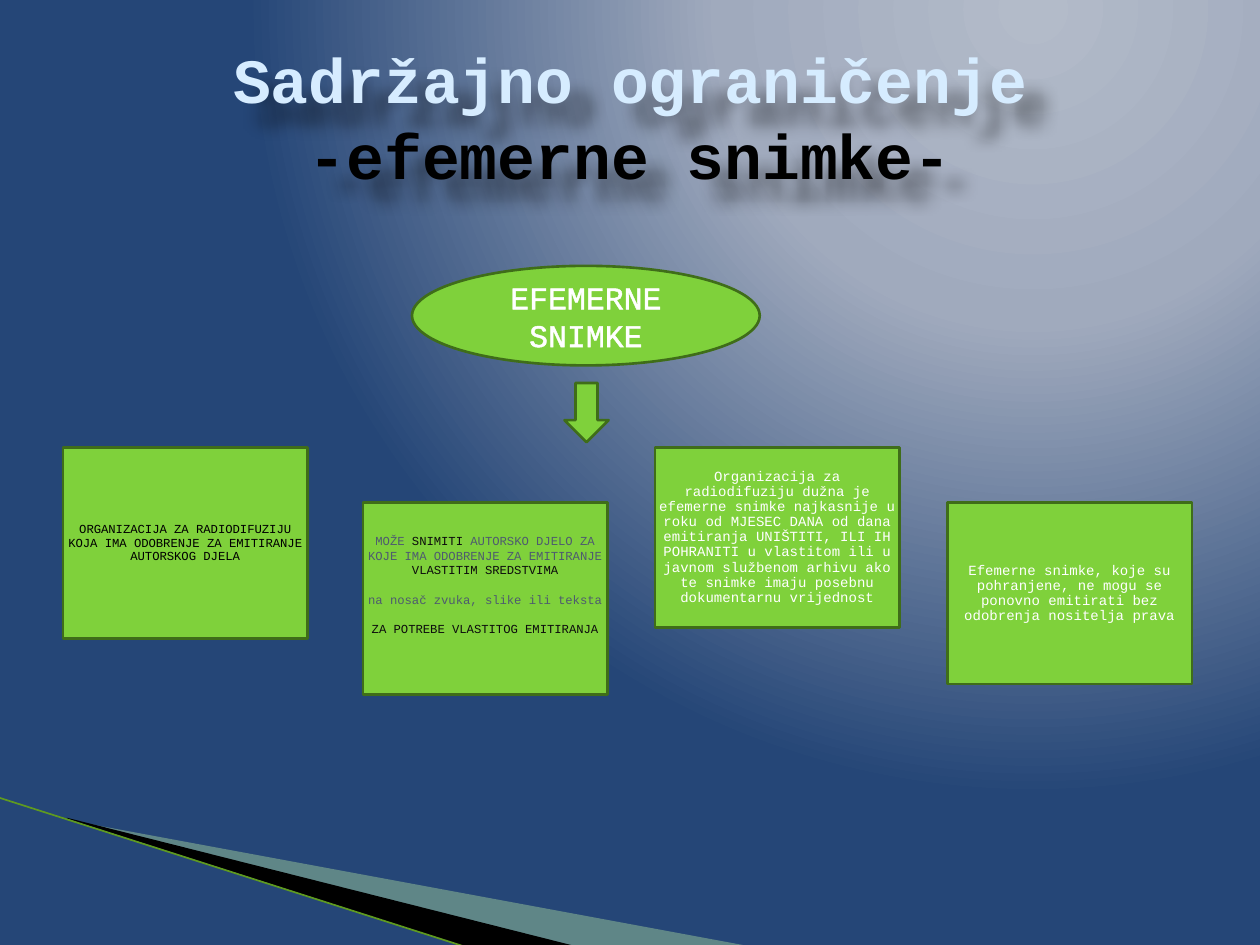
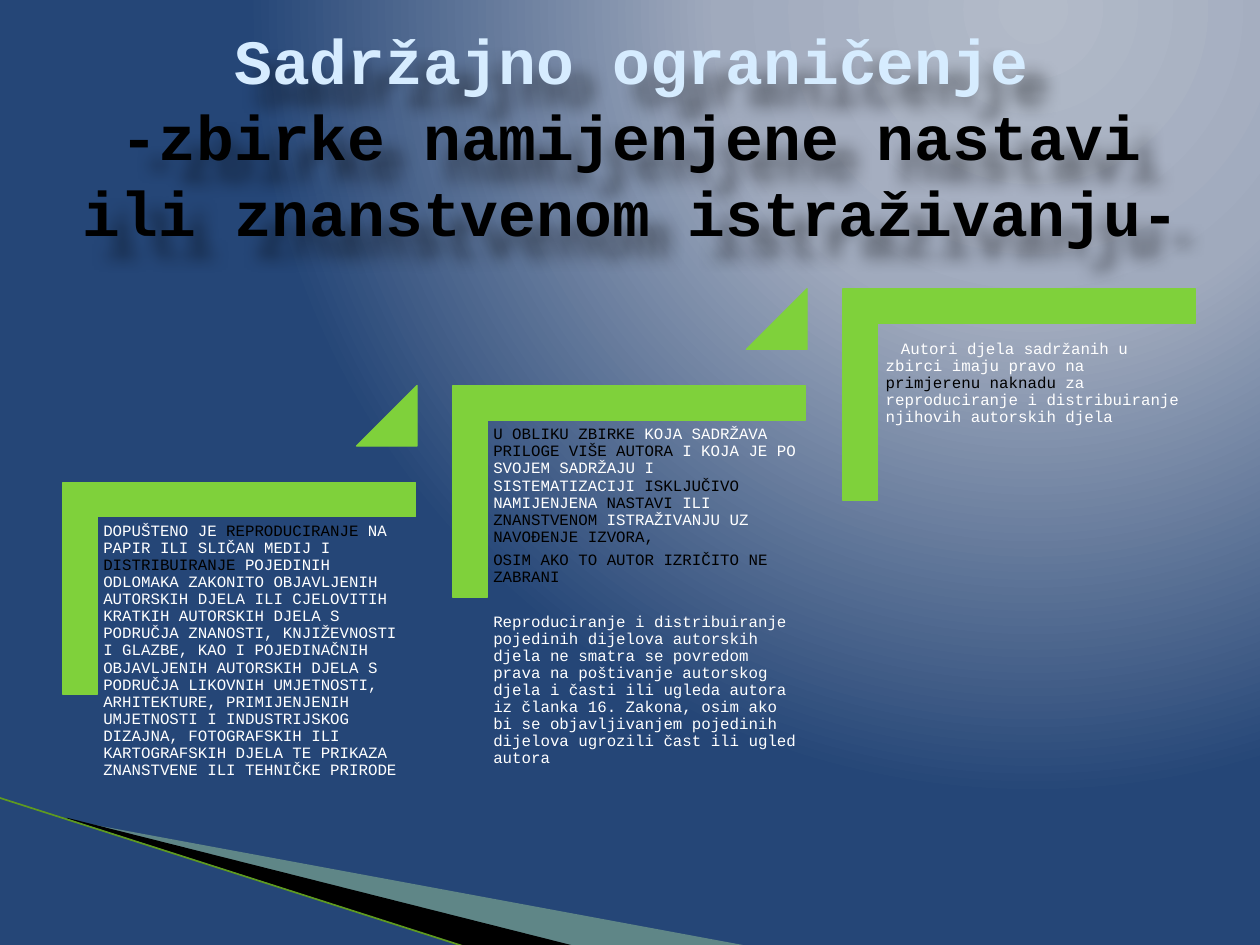
from pptx import Presentation
from pptx.dml.color import RGBColor
from pptx.enum.shapes import MSO_CONNECTOR, MSO_SHAPE
from pptx.enum.text import MSO_ANCHOR, PP_ALIGN
from pptx.oxml import parse_xml
from pptx.oxml.ns import nsdecls, qn
from pptx.util import Inches, Pt

FONT = "Courier New"
GREEN, DARK_GREEN = "7FD13B", "3F6D19"
WHITE, BLACK, INK, SLATE, ICE = "FFFFFF", "000000", "0D0D0D", "4E5B6F", "D6ECFF"
BACKGROUND_STOPS = [(0, "B3BBC9"), (40, "A0AABD"), (100, "254677")]
WEDGES = [
    ([(0.55, 6.51), (5.95, 7.51), (4.56, 7.51), (0.55, 6.5)], "B8E7A1", 40),
    ([(0.53, 6.49), (4.57, 7.51), (3.72, 7.52), (0.54, 6.5)], BLACK, 100),
]
EDGE_LINE = (-0.01, 6.33, 3.71, 7.52)
HEADING = "Sadržajno ograničenje"

RECORDING_TITLE = ("-efemerne snimke-", (0.5, 0.3, 9, 1.25))
RECORDING_LABEL = "EFEMERNE SNIMKE"
RECORDING_BOXES = [
    {"at": (0.5, 3.55, 1.94, 1.52), "size": 7, "paragraphs": [
        [("ORGANIZACIJA ZA RADIODIFUZIJU KOJA IMA ODOBRENJE ZA EMITIRANJE "
          "AUTORSKOG DJELA", BLACK)]]},
    {"at": (2.88, 3.99, 1.94, 1.52), "size": 7, "spacing": 1, "gaps": (0, 8.4, 8.4),
     "insets": (0, 0, 0, 0.22), "paragraphs": [
        [("MOŽE ", SLATE), ("SNIMITI", INK),
         (" AUTORSKO DJELO ZA KOJE IMA ODOBRENJE ZA EMITIRANJE ", SLATE),
         ("VLASTITIM SREDSTVIMA", INK)],
        [("na nosač zvuka, slike ili teksta", SLATE)],
        [("ZA POTREBE VLASTITOG EMITIRANJA", INK)]]},
    {"at": (5.2, 3.55, 1.94, 1.43), "size": 8, "paragraphs": [
        [("Organizacija za radiodifuziju dužna je efemerne snimke najkasnije u roku "
          "od MJESEC DANA od dana emitiranja UNIŠTITI, ILI IH POHRANITI u vlastitom "
          "ili u javnom službenom arhivu ako te snimke imaju posebnu dokumentarnu "
          "vrijednost", WHITE)]]},
    {"at": (7.52, 3.99, 1.94, 1.44), "size": 8, "paragraphs": [
        [("Efemerne snimke, koje su pohranjene, ne mogu se ponovno emitirati bez "
          "odobrenja nositelja prava", WHITE)]]},
]

COLLECTION_TITLE = ("-zbirke namijenjene nastavi ili znanstvenom istraživanju-",
                    (0.51, 0.21, 9, 1.73))
STEP_RIGHT, STEP_UP = 3.095, 0.768
COLLECTION_STEPS = [
    {"paragraphs": [
        [("DOPUŠTENO JE ", WHITE), ("REPRODUCIRANJE", BLACK),
         (" NA PAPIR ILI SLIČAN MEDIJ I ", WHITE), ("DISTRIBUIRANJE ", BLACK),
         ("POJEDINIH ODLOMAKA ZAKONITO OBJAVLJENIH AUTORSKIH DJELA ILI CJELOVITIH "
          "KRATKIH AUTORSKIH DJELA S PODRUČJA ZNANOSTI, KNJIŽEVNOSTI I GLAZBE, KAO I "
          "POJEDINAČNIH OBJAVLJENIH AUTORSKIH DJELA S PODRUČJA LIKOVNIH UMJETNOSTI, "
          "ARHITEKTURE, PRIMIJENJENIH UMJETNOSTI I INDUSTRIJSKOG DIZAJNA, "
          "FOTOGRAFSKIH ILI KARTOGRAFSKIH DJELA TE PRIKAZA ZNANSTVENE ILI TEHNIČKE "
          "PRIRODE", WHITE)]]},
    {"gaps": (0, 3.3, 16), "paragraphs": [
        [("U OBLIKU ZBIRKE ", BLACK), ("KOJA SADRŽAVA ", WHITE),
         ("PRILOGE VIŠE AUTORA ", BLACK),
         ("I KOJA JE PO SVOJEM SADRŽAJU I SISTEMATIZACIJI ", WHITE),
         ("ISKLJUČIVO", BLACK), (" NAMIJENJENA ", WHITE), ("NASTAVI ", BLACK),
         ("ILI ", WHITE), ("ZNANSTVENOM", BLACK), (" ISTRAŽIVANJU UZ ", WHITE),
         ("NAVOĐENJE IZVORA,", BLACK)],
        [("OSIM AKO TO AUTOR IZRIČITO NE ZABRANI", BLACK)],
        [("Reproduciranje i distribuiranje pojedinih dijelova autorskih djela ne "
          "smatra se povredom prava na poštivanje autorskog djela i časti ili ugleda "
          "autora iz članka 16. Zakona, osim ako bi se objavljivanjem pojedinih "
          "dijelova ugrozili čast ili ugled autora", WHITE)]]},
    {"insets": (0.06, 0.13, 0.09, 0.06), "indent": 0.12, "paragraphs": [
        [("Autori djela sadržanih u zbirci imaju pravo na ", WHITE),
         ("primjerenu naknadu", BLACK),
         (" za reproduciranje i distribuiranje njihovih autorskih djela", WHITE)]]},
]


def colour(value):
    return RGBColor.from_string(value)


def apply(target, values):
    for name, value in values.items():
        setattr(target, name, value)


def xml(text):
    head, tail = text.split(">", 1) if "/>" not in text.split(">")[0] + ">" else (text[:-2], None)
    return parse_xml(f"{head} {nsdecls('a')}" + ("/>" if tail is None else ">" + tail))


def paint_background(master):
    master.background.fill.gradient()
    gradient = next(master.element.iter(qn("a:gradFill")))
    for child in list(gradient):
        gradient.remove(child)
    stops = "".join(f'<a:gs pos="{place * 1000}"><a:srgbClr val="{value}"/></a:gs>'
                    for place, value in BACKGROUND_STOPS)
    gradient.append(xml(f"<a:gsLst>{stops}</a:gsLst>"))
    gradient.append(xml('<a:path path="circle"><a:fillToRect l="65000" t="0" r="0" '
                        'b="98000"/></a:path>'))


def dress(shape, fill, line=None, width=0):
    shape.shadow.inherit = False
    shape.fill.solid()
    shape.fill.fore_color.rgb = colour(fill)
    if line:
        shape.line.color.rgb = colour(line)
        shape.line.width = Pt(width)
    else:
        shape.line.fill.background()


def add_preset(page, kind, at, line=DARK_GREEN, width=1.5):
    shape = page.shapes.add_shape(kind, *map(Inches, at))
    dress(shape, GREEN, line, width)
    return shape


def add_span(para, text, size, ink, bold=False):
    span = para.add_run()
    span.text = text
    apply(span.font, {"name": FONT, "size": Pt(size), "bold": bold})
    span.font.color.rgb = colour(ink)
    return span


def write(box, paragraphs, size, align, anchor, insets, spacing=0.9, gaps=(0,), indent=0):
    frame = box.text_frame
    sides = ("margin_left", "margin_top", "margin_right", "margin_bottom")
    apply(frame, {"word_wrap": True, "vertical_anchor": anchor,
                  **dict(zip(sides, map(Inches, insets)))})
    for index, (spans, gap) in enumerate(zip(paragraphs, gaps)):
        para = frame.add_paragraph() if index else frame.paragraphs[0]
        apply(para, {"alignment": align, "line_spacing": spacing})
        if gap:
            para.space_before = Pt(gap)
        if indent:
            para._p.get_or_add_pPr().set("indent", str(Inches(indent)))
        for text, ink in spans:
            add_span(para, text, size, ink)


def add_title(page, subtitle, at):
    box = page.shapes.add_textbox(*map(Inches, at))
    apply(box.text_frame, {"word_wrap": True, "vertical_anchor": MSO_ANCHOR.MIDDLE})
    para = box.text_frame.paragraphs[0]
    para.alignment = PP_ALIGN.CENTER
    add_span(para, HEADING, 36, ICE, True)
    para.add_line_break()
    add_span(para, subtitle, 36, BLACK, True)
    box._element.spPr.append(xml(
        f'<a:effectLst><a:outerShdw blurRad="{Inches(0.12)}" dist="{Inches(0.23)}" '
        'dir="2700000" algn="tl" rotWithShape="0"><a:srgbClr val="000000">'
        '<a:alpha val="45000"/></a:srgbClr></a:outerShdw></a:effectLst>'))


def add_page(deck):
    page = deck.slides.add_slide(deck.slide_layouts[6])
    for points, fill, opacity in WEDGES:
        start, *rest = [tuple(map(Inches, point)) for point in points]
        builder = page.shapes.build_freeform(*start, scale=1.0)
        builder.add_line_segments(rest, close=True)
        wedge = builder.convert_to_shape()
        dress(wedge, fill)
        if opacity < 100:
            tint = next(wedge._element.spPr.iter(qn("a:srgbClr")))
            tint.append(xml(f'<a:alpha val="{opacity * 1000}"/>'))
    edge = page.shapes.add_connector(MSO_CONNECTOR.STRAIGHT, *map(Inches, EDGE_LINE))
    edge.line.color.rgb = colour("5F9A20")
    edge.line.width = Pt(0.95)
    edge._element.spPr.append(xml("<a:effectLst/>"))
    return page


def build_recordings(deck):
    page = add_page(deck)
    for item in RECORDING_BOXES:
        box = add_preset(page, MSO_SHAPE.RECTANGLE, item["at"])
        options = {"insets": (0, 0, 0, 0), **item}
        del options["at"]
        write(box, align=PP_ALIGN.CENTER, anchor=MSO_ANCHOR.MIDDLE, **options)
    add_title(page, *RECORDING_TITLE)
    oval = add_preset(page, MSO_SHAPE.OVAL, (3.27, 2.11, 2.76, 0.79))
    write(oval, [[(RECORDING_LABEL, WHITE)]], 18, PP_ALIGN.CENTER, MSO_ANCHOR.MIDDLE,
          (0.1, 0.05, 0.1, 0.05), spacing=1)
    label = oval.text_frame.paragraphs[0].runs[0]
    label.font._element.insert(0, xml(
        f'<a:ln w="{Pt(1.45)}"><a:solidFill><a:srgbClr val="{WHITE}"/></a:solidFill></a:ln>'))
    add_preset(page, MSO_SHAPE.DOWN_ARROW, (4.48, 3.04, 0.35, 0.47))


def build_collections(deck):
    page = add_page(deck)
    for index, step in enumerate(COLLECTION_STEPS):
        right, up = index * STEP_RIGHT, index * STEP_UP
        corner = add_preset(page, MSO_SHAPE.CORNER, (1.06 + right, 3.27 - up, 1.68, 2.8),
                            GREEN, 0.79)
        corner.rotation = 90
        for number in range(2):
            corner.adjustments[number] = 0.161
        box = page.shapes.add_textbox(*map(Inches, (0.78 + right, 4.11 - up, 2.53, 2.22)))
        write(box, size=9, align=PP_ALIGN.LEFT, anchor=MSO_ANCHOR.TOP,
              **{"insets": (0.04,) * 4, **step})
        if index < len(COLLECTION_STEPS) - 1:
            marker = add_preset(page, MSO_SHAPE.ISOSCELES_TRIANGLE,
                                (2.83 + right, 3.06 - up, 0.48, 0.48), GREEN, 0.79)
            marker.adjustments[0] = 1
    add_title(page, *COLLECTION_TITLE)


def main():
    deck = Presentation()
    apply(deck, {"slide_width": Inches(10), "slide_height": Inches(7.5)})
    paint_background(deck.slide_master)
    build_recordings(deck)
    build_collections(deck)
    deck.save("out.pptx")


if __name__ == "__main__":
    main()
